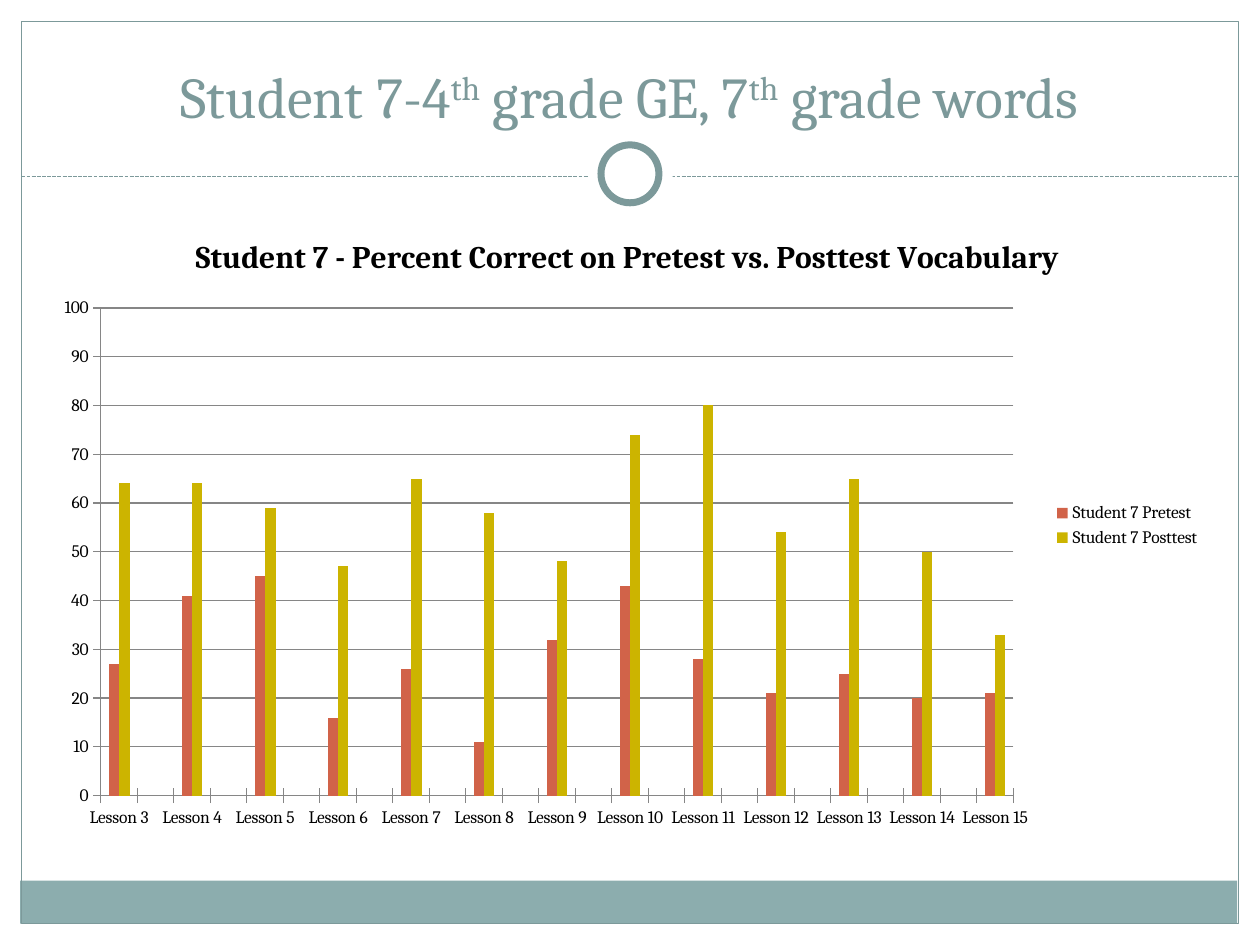
from dataclasses import dataclass
from typing import Optional

from pptx import Presentation
from pptx.chart.data import CategoryChartData
from pptx.dml.color import RGBColor
from pptx.enum.chart import XL_CHART_TYPE, XL_LEGEND_POSITION, XL_TICK_MARK
from pptx.enum.dml import MSO_LINE
from pptx.enum.shapes import MSO_CONNECTOR, MSO_SHAPE
from pptx.enum.text import MSO_ANCHOR, PP_ALIGN
from pptx.oxml.ns import qn
from pptx.util import Inches, Pt

WHITE = RGBColor(0xFF, 0xFF, 0xFF)
BLACK = RGBColor(0, 0, 0)
TEAL = RGBColor(0x7C, 0x99, 0x9A)
BAND = RGBColor(0x8C, 0xAD, 0xAE)
GRAY = RGBColor(0x86, 0x86, 0x86)
RED = RGBColor(0xD1, 0x63, 0x49)
GOLD = RGBColor(0xCC, 0xB4, 0x00)
FONT = "Cambria"


@dataclass
class Panel:
    left: float
    top: float
    width: float
    height: float
    fill: Optional[RGBColor] = WHITE
    line: float = 0
    kind: MSO_SHAPE = MSO_SHAPE.RECTANGLE


@dataclass
class Test:
    name: str
    color: RGBColor
    scores: list[int]


FRAME = [
    Panel(0, 0, 10, 1.52),
    Panel(0, 0, 0.17, 7.5),
    Panel(9.83, 0, 0.17, 7.5),
    Panel(0.16, 6.99, 9.66, 0.34, BAND),
    Panel(0.17, 0.17, 9.66, 7.16, None, 0.75),
]
RING = [
    Panel(4.67, 1.05, 0.67, 0.67, kind=MSO_SHAPE.OVAL),
    Panel(4.77, 1.15, 0.46, 0.46, line=4, kind=MSO_SHAPE.OVAL),
]
TITLE = [("Student 7-4", 0), ("th", 30), (" grade GE, 7", 0), ("th", 30), (" grade words", 0)]
TESTS = [
    Test("Student 7 Pretest", RED, [27, 41, 45, 16, 26, 11, 32, 43, 28, 21, 25, 20, 21]),
    Test("Student 7 Posttest", GOLD, [64, 64, 59, 47, 65, 58, 48, 74, 80, 54, 65, 50, 33]),
]


def spread(items: list, gap) -> list:
    """Put a gap between each pair of neighbours."""
    return [part for item in items for part in (item, gap)][:-1]


def draw_panel(slide, panel: Panel) -> None:
    """Draw one plain shape of the frame."""
    shape = slide.shapes.add_shape(
        panel.kind, Inches(panel.left), Inches(panel.top),
        Inches(panel.width), Inches(panel.height))
    shape.shadow.inherit = False
    if panel.fill is None:
        shape.fill.background()
    else:
        shape.fill.solid()
        shape.fill.fore_color.rgb = panel.fill
    if panel.line:
        shape.line.color.rgb = TEAL
        shape.line.width = Pt(panel.line)
    else:
        shape.line.fill.background()


def draw_rule(slide) -> None:
    """Draw the dashed rule under the title."""
    rule = slide.shapes.add_connector(
        MSO_CONNECTOR.STRAIGHT, Inches(0.17), Inches(1.4), Inches(9.83), Inches(1.4))
    rule.line.color.rgb = TEAL
    rule.line.width = Pt(0.75)
    rule.line.dash_style = MSO_LINE.SQUARE_DOT
    props = rule._element.spPr
    props.append(props.makeelement(qn("a:effectLst"), {}))


def draw_title(slide) -> None:
    """Write the title with its raised ordinals."""
    box = slide.shapes.add_textbox(Inches(0.33), Inches(0.25), Inches(9.33), Inches(0.83))
    frame = box.text_frame
    frame.word_wrap = True
    frame.vertical_anchor = MSO_ANCHOR.BOTTOM
    para = frame.paragraphs[0]
    para.alignment = PP_ALIGN.CENTER
    para.font.name = FONT
    para.font.size = Pt(33)
    para.font.color.rgb = TEAL
    for text, rise in TITLE:
        run = para.add_run()
        run.text = text
        if rise:
            run.font._element.set("baseline", str(rise * 1000))


def draw_chart(slide) -> None:
    """Chart the scores by lesson, with a blank slot between lessons."""
    data = CategoryChartData(number_format="General")
    data.categories = spread([f"Lesson {num}" for num in range(3, 16)], "")
    for test in TESTS:
        data.add_series(test.name, spread(test.scores, None))
    chart = slide.shapes.add_chart(
        XL_CHART_TYPE.COLUMN_CLUSTERED, Inches(0.33), Inches(1.67),
        Inches(9.3), Inches(5), data).chart
    chart.font.name = FONT
    chart.font.size = Pt(10)
    chart.font.color.rgb = BLACK

    chart.has_title = True
    para = chart.chart_title.text_frame.paragraphs[0]
    para.text = "Student 7 - Percent Correct on Pretest vs. Posttest Vocabulary"
    para.font.name = FONT
    para.font.size = Pt(18)
    para.font.bold = True
    para.font.color.rgb = BLACK
    chart.has_legend = True
    chart.legend.position = XL_LEGEND_POSITION.RIGHT
    chart.legend.include_in_layout = False

    plot = chart.plots[0]
    plot.gap_width = 150
    plot.vary_by_categories = False
    for series, test in zip(plot.series, TESTS):
        series.format.fill.solid()
        series.format.fill.fore_color.rgb = test.color

    scale = chart.value_axis
    scale.maximum_scale = 100
    scale.has_major_gridlines = True
    for axis in (chart.category_axis, scale):
        axis.major_tick_mark = XL_TICK_MARK.CROSS
        axis.format.line.color.rgb = GRAY
    scale.major_gridlines.format.line.color.rgb = GRAY


def main() -> None:
    """Build and save the slide."""
    deck = Presentation()
    deck.slide_width, deck.slide_height = Inches(10), Inches(7.5)
    slide = deck.slides.add_slide(deck.slide_layouts[6])
    for panel in FRAME:
        draw_panel(slide, panel)
    draw_rule(slide)
    for panel in RING:
        draw_panel(slide, panel)
    draw_title(slide)
    draw_chart(slide)
    deck.save("out.pptx")


if __name__ == "__main__":
    main()
